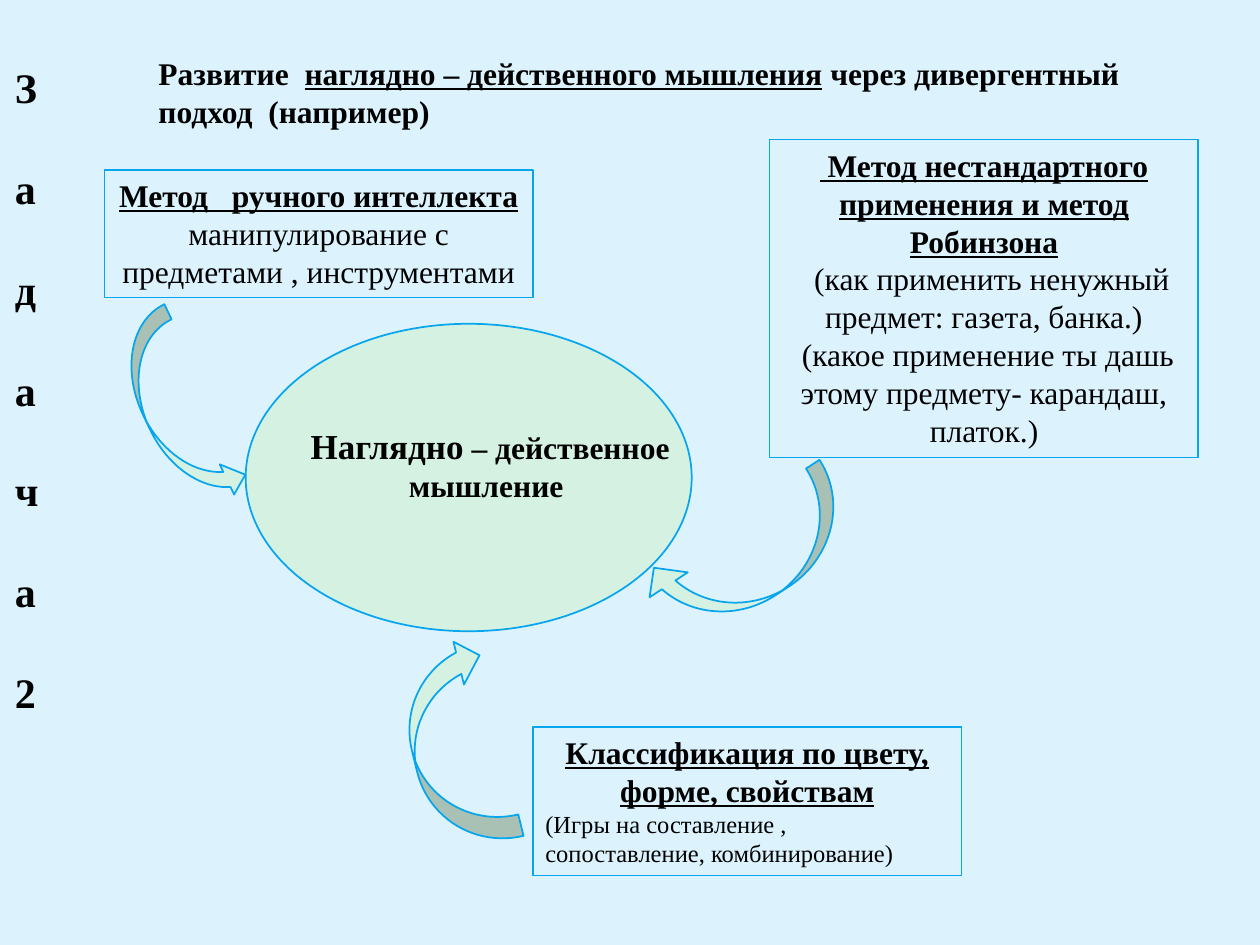
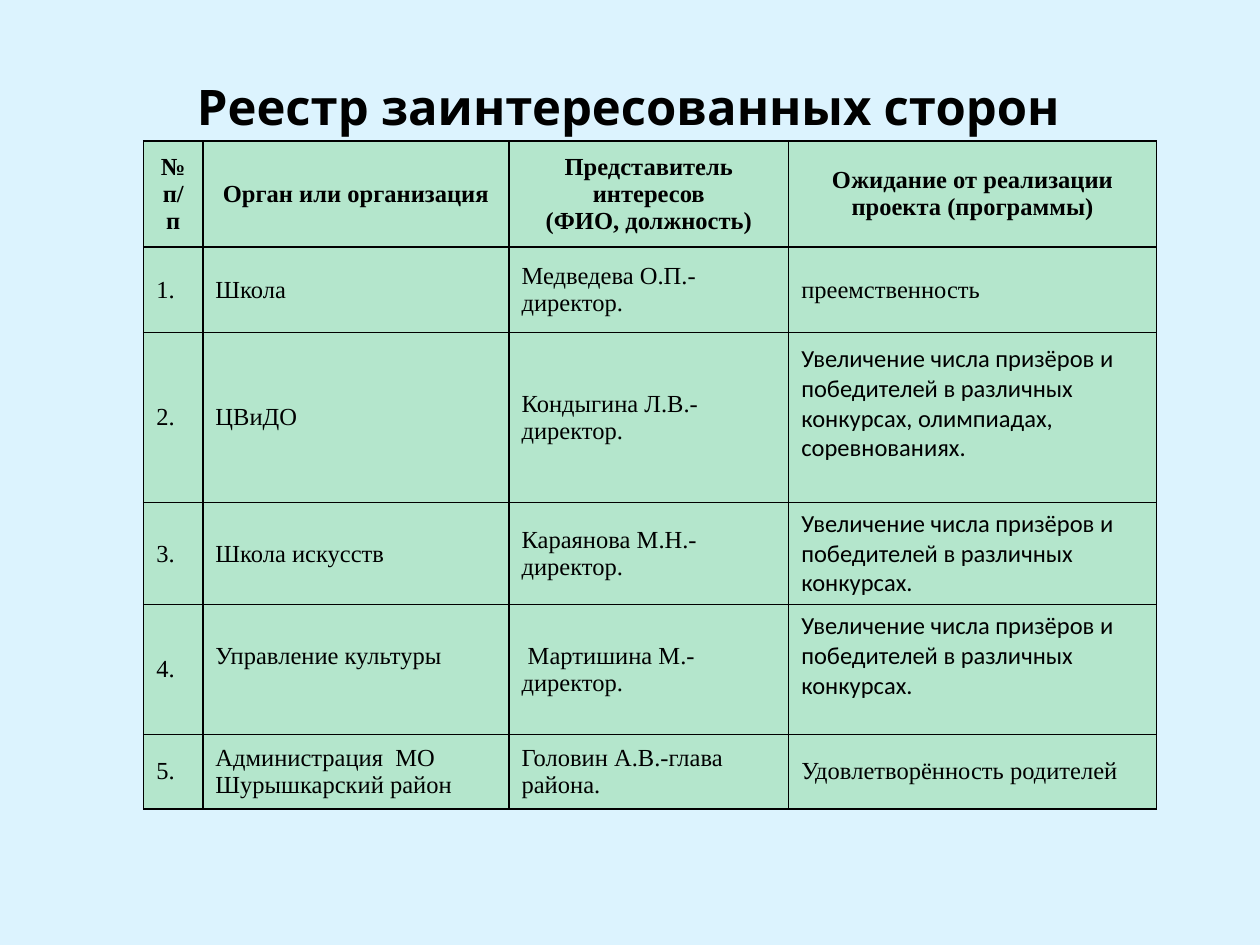
from lxml import etree
from pptx import Presentation
from pptx.dml.color import RGBColor
from pptx.enum import shapes, text
from pptx.oxml.ns import qn
from pptx.util import Inches, Pt

BACKGROUND = RGBColor(0xDC, 0xF3, 0xFE)
MINT = RGBColor(0xD4, 0xF1, 0xE2)
CELL_GREEN = RGBColor(0xB4, 0xE6, 0xCC)
BLUE = RGBColor(0x08, 0xA5, 0xEF)
BLACK = RGBColor(0, 0, 0)
SERIF, TITLE_FONT, SANS = "Times New Roman", "Karla", "Calibri"
LEFT, CENTER = text.PP_ALIGN.LEFT, text.PP_ALIGN.CENTER
SHAPE = shapes.MSO_SHAPE

# A paragraph is (alignment, runs); a run is (text, size, style), style holding "b" and/or "u".
TASK = [(LEFT, [("З а д а ч а 2", 24, "b")])]
HEADING = [(LEFT, [("Развитие  ", 18, "b"),
                   ("наглядно – действенного мышления", 18, "bu"),
                   (" через дивергентный подход  (например)", 18, "b")])]
CENTRE_LABEL = [(CENTER, [("Наглядно", 20, "b"), (" – действенное мышление ", 18, "b")])]
METHODS = [
    ((6.11, 1.11, 3.4, 2.52), [
        (CENTER, [(" Метод нестандартного применения и метод Робинзона", 18, "bu")]),
        (CENTER, [("  (как применить ненужный предмет: газета, банка.)", 18, "")]),
        (CENTER, [(" (какое применение ты дашь этому предмету- карандаш, платок.)", 18, "")])]),
    ((0.83, 1.35, 3.4, 1.01), [
        (CENTER, [("Метод   ручного интеллекта", 18, "bu")]),
        (CENTER, [("манипулирование с предметами , инструментами", 18, "")])]),
    ((4.23, 5.77, 3.4, 1.18), [
        (CENTER, [("Классификация по цвету, форме, свойствам", 18, "bu")]),
        (LEFT, [("(Игры на составление , сопоставление, комбинирование)", 14, "")])]),
]
# preset, place, rotation, flips, adjustments
ARROWS = [
    (SHAPE.CURVED_LEFT_ARROW, (3.27, 5.09, 0.7, 1.65), 346.3, "HV", ()),
    (SHAPE.CURVED_UP_ARROW, (0.6, 3, 1.63, 0.53), 64.6, "", (0.25, 0.5, 0.28)),
    (SHAPE.CURVED_RIGHT_ARROW, (5.61, 3.55, 0.71, 1.75), 236.9, "V", (0.18, 0.51, 0.25)),
]

REGISTER_TITLE = "Реестр заинтересованных сторон"
WINNERS = "Увеличение числа призёров и победителей в различных конкурсах"
REGISTER = [
    ("№\nп/п", "Орган или организация", "Представитель интересов\v(ФИО, должность)",
     "Ожидание от реализации проекта (программы)"),
    ("1.", "Школа", "Медведева О.П.-директор.", "преемственность"),
    ("2.", "ЦВиДО", "Кондыгина Л.В.-директор.", WINNERS + ", олимпиадах, соревнованиях."),
    ("3.", "Школа искусств", "Караянова М.Н.-директор.", WINNERS + "."),
    ("4.", "Управление культуры", " Мартишина М.-директор.", WINNERS + "."),
    ("5.", "Администрация  МО Шурышкарский район", "Головин А.В.-глава района.",
     "Удовлетворённость родителей"),
]
COLUMN_WIDTHS = (0.47, 2.43, 2.22, 2.92)
ROW_HEIGHTS = (0.84, 0.68, 1.35, 0.81, 1.03, 0.59)
RAISED_CELLS = {(2, 3), (4, 1), (4, 3)}


def inches(place):
    return [Inches(length) for length in place]


def style_run(run, size, style="", font=SERIF):
    run.font.name, run.font.size = font, Pt(size)
    run.font.bold, run.font.underline = "b" in style, "u" in style
    run.font.color.rgb = BLACK


def write(frame, paragraphs, line_spacing=1.0, font=SERIF):
    frame.word_wrap = True
    for number, (alignment, runs) in enumerate(paragraphs):
        paragraph = frame.paragraphs[0] if number == 0 else frame.add_paragraph()
        paragraph.alignment, paragraph.line_spacing = alignment, line_spacing
        for words, size, style in runs:
            run = paragraph.add_run()
            run.text = words
            style_run(run, size, style, font)


def add_label(slide, place, paragraphs, **options):
    frame = slide.shapes.add_textbox(*inches(place)).text_frame
    write(frame, paragraphs, **options)
    return frame


def add_outlined(slide, preset, place, fill=None, line_width=1):
    shape = slide.shapes.add_shape(preset, *inches(place))
    shape.shadow.inherit = False
    if fill is None:
        shape.fill.background()
    else:
        shape.fill.solid()
        shape.fill.fore_color.rgb = fill
    shape.line.color.rgb, shape.line.width = BLUE, Pt(line_width)
    return shape


def add_borders(cell):
    properties = cell._tc.get_or_add_tcPr()
    for side in "LRTB":
        line = etree.SubElement(properties, qn(f"a:ln{side}"), w=str(Pt(1)))
        fill = etree.SubElement(line, qn("a:solidFill"))
        etree.SubElement(fill, qn("a:srgbClr"), val=str(BLACK))


def add_slide(deck):
    slide = deck.slides.add_slide(deck.slide_layouts[6])
    slide.background.fill.solid()
    slide.background.fill.fore_color.rgb = BACKGROUND
    return slide


def build_thinking(slide):
    task = add_label(slide, (0.02, 0.44, 0.64, 6.3), TASK)
    task._txBody.bodyPr.set("vert", "wordArtVert")
    add_label(slide, (1.16, 0.38, 8.36, 0.71), HEADING)
    add_outlined(slide, SHAPE.OVAL, (1.95, 2.57, 3.54, 2.44), MINT)
    for preset, place, rotation, flips, adjustments in ARROWS:
        arrow = add_outlined(slide, preset, place, MINT)
        arrow.rotation = rotation
        for axis in flips:
            arrow._element.spPr.xfrm.set(f"flip{axis}", "1")
        for number, value in enumerate(adjustments):
            arrow.adjustments[number] = value
    add_label(slide, (2.19, 3.32, 3.4, 0.74), CENTRE_LABEL)
    for place, paragraphs in METHODS:
        method = add_outlined(slide, SHAPE.RECTANGLE, place, line_width=0.75)
        method.text_frame.vertical_anchor = text.MSO_ANCHOR.TOP
        write(method.text_frame, paragraphs)


def fill_cell(cell, words, row, column):
    add_borders(cell)
    cell.fill.solid()
    cell.fill.fore_color.rgb = CELL_GREEN
    cell.vertical_anchor = text.MSO_ANCHOR.MIDDLE
    if (row, column) in RAISED_CELLS:
        cell.margin_bottom = Inches(0.27)
    cell.text_frame.text = words
    for paragraph in cell.text_frame.paragraphs:
        paragraph.alignment = CENTER if row == 0 else LEFT
        for run in paragraph.runs:
            style_run(run, 14, "b" if row == 0 else "",
                      SANS if words.startswith(WINNERS) else SERIF)


def build_register(slide):
    title = add_label(slide, (0.96, 0.12, 8.05, 1.01),
                      [(CENTER, [(REGISTER_TITLE, 28, "b")])],
                      line_spacing=0.9, font=TITLE_FONT)
    title.vertical_anchor = text.MSO_ANCHOR.BOTTOM
    place = (1.14, 1.12, sum(COLUMN_WIDTHS), sum(ROW_HEIGHTS))
    table = slide.shapes.add_table(len(REGISTER), len(COLUMN_WIDTHS), *inches(place)).table
    table.horz_banding = False
    for column, width in zip(table.columns, COLUMN_WIDTHS):
        column.width = Inches(width)
    for row, height in zip(table.rows, ROW_HEIGHTS):
        row.height = Inches(height)
    for row, entries in enumerate(REGISTER):
        for column, words in enumerate(entries):
            fill_cell(table.cell(row, column), words, row, column)


def main():
    deck = Presentation()
    deck.slide_width, deck.slide_height = Inches(10), Inches(7.5)
    build_thinking(add_slide(deck))
    build_register(add_slide(deck))
    deck.save("out.pptx")


if __name__ == "__main__":
    main()
